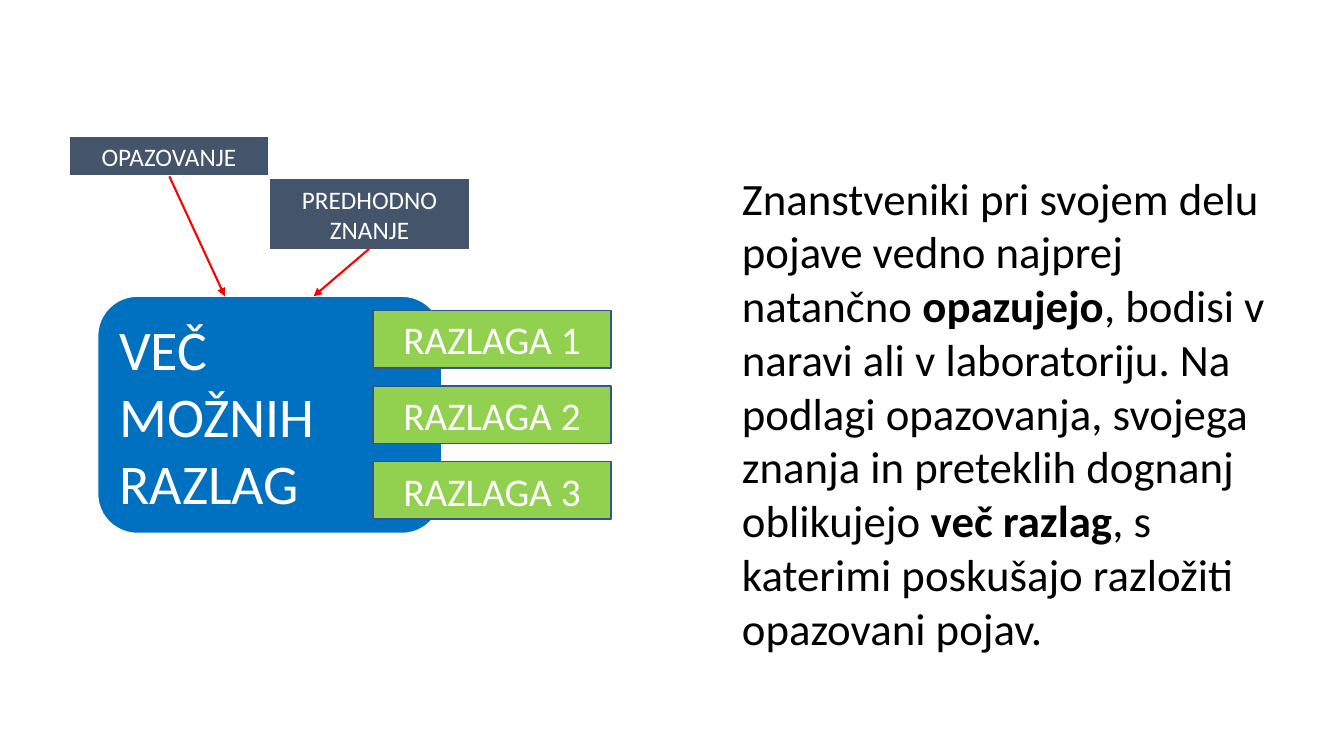
from dataclasses import dataclass

from lxml import etree
from pptx import Presentation
from pptx import util as u
from pptx.dml.color import RGBColor
from pptx.enum import shapes, text
from pptx.oxml.ns import qn

PX = 9144


@dataclass(frozen=True)
class Theme:
    font: str = "Calibri"
    ink: str = "000000"
    white: str = "FFFFFF"
    slate: str = "44546A"
    blue: str = "0070C0"
    green: str = "92D050"
    edge: str = "325491"
    red: str = "FF0000"
    small: int = 18
    label: int = 28
    body: int = 32
    large: int = 40


def color(code):
    return RGBColor.from_string(code)


def write(frame, words, font, size, ink, align=text.PP_ALIGN.LEFT,
          anchor=text.MSO_ANCHOR.MIDDLE):
    frame.word_wrap = True
    frame.auto_size = text.MSO_AUTO_SIZE.SHAPE_TO_FIT_TEXT
    frame.vertical_anchor = anchor
    for row, line in enumerate(words.split("\n")):
        para = frame.add_paragraph() if row else frame.paragraphs[0]
        para.alignment = align
        for part, piece in enumerate(line.split("**")):
            run = para.add_run()
            run.text = piece
            run.font.name = font
            run.font.size = u.Pt(size)
            run.font.bold = part % 2 == 1
            run.font.color.rgb = color(ink)


class Canvas:
    def __init__(self, slide, theme):
        self.slide = slide
        self.theme = theme

    def prose(self, words, x, y, w, h):
        box = self.slide.shapes.add_textbox(x * PX, y * PX, w * PX, h * PX)
        write(box.text_frame, words, self.theme.font, self.theme.body,
              self.theme.ink, anchor=text.MSO_ANCHOR.TOP)

    def block(self, words, x, y, w, h, fill, line, width, size,
              kind=shapes.MSO_SHAPE.RECTANGLE, align=text.PP_ALIGN.CENTER):
        box = self.slide.shapes.add_shape(kind, x * PX, y * PX, w * PX, h * PX)
        box.shadow.inherit = False
        box.fill.solid()
        box.fill.fore_color.rgb = color(fill)
        box.line.color.rgb = color(line)
        box.line.width = u.Pt(width)
        write(box.text_frame, words, self.theme.font, size,
              self.theme.white, align=align)

    def arrow(self, x1, y1, x2, y2):
        link = self.slide.shapes.add_connector(
            shapes.MSO_CONNECTOR.STRAIGHT, x1 * PX, y1 * PX, x2 * PX, y2 * PX)
        link.line.color.rgb = color(self.theme.red)
        link.line.width = u.Pt(1.5)
        etree.SubElement(link.line._get_or_add_ln(), qn("a:tailEnd"),
                         type="triangle")
        etree.SubElement(link._element.spPr, qn("a:effectLst"))


def main():
    deck = Presentation()
    deck.slide_width = 1333 * PX
    deck.slide_height = 750 * PX
    theme = Theme()
    page = Canvas(deck.slides.add_slide(deck.slide_layouts[6]), theme)

    page.prose(
        "Znanstveniki pri svojem delu pojave vedno najprej natančno "
        "**opazujejo**, bodisi v naravi ali v laboratoriju. Na podlagi "
        "opazovanja, svojega znanja in preteklih dognanj oblikujejo "
        "**več razlag**, s katerimi poskušajo razložiti opazovani pojav.",
        726, 164, 569, 495)

    for words, x, y, h in (("OPAZOVANJE", 68, 135, 40),
                           ("PREDHODNO ZNANJE", 267, 177, 71)):
        page.block(words, x, y, 199, h, theme.slate, theme.white, 1.5,
                   theme.small)

    page.block("VEČ\nMOŽNIH\nRAZLAG", 97, 294, 341, 235, theme.blue,
               theme.white, 0.75, theme.large,
               kind=shapes.MSO_SHAPE.ROUNDED_RECTANGLE,
               align=text.PP_ALIGN.LEFT)

    for step in range(3):
        page.block(f"RAZLAGA {step + 1}", 370, 308 + 75 * step, 236, 57,
                   theme.green, theme.edge, 1, theme.label)

    page.arrow(168, 175, 223, 294)
    page.arrow(366, 247, 311, 294)

    deck.save("out.pptx")


if __name__ == "__main__":
    main()
